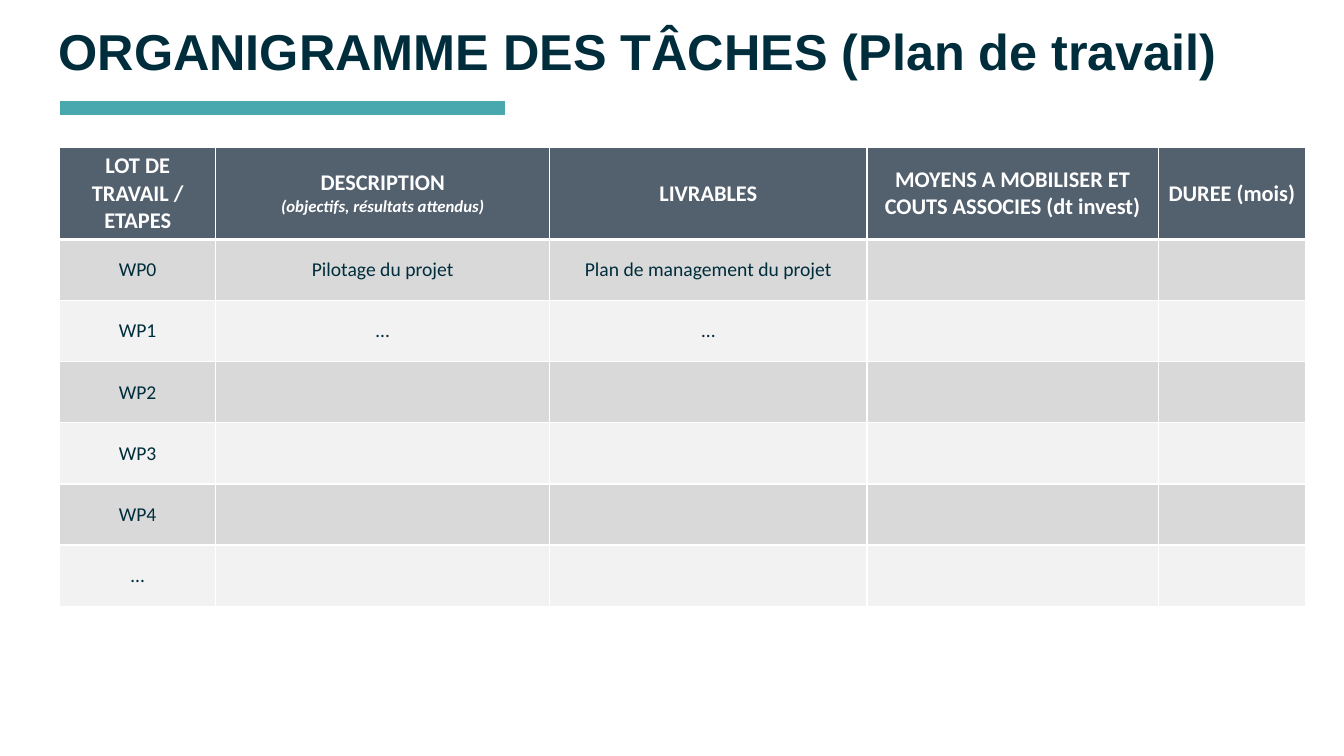
from lxml import etree
from pptx import Presentation
from pptx.dml.color import RGBColor
from pptx.enum.shapes import MSO_CONNECTOR as Connector
from pptx.enum.text import MSO_ANCHOR as Anchor, MSO_AUTO_SIZE as AutoSize, PP_ALIGN as Align
from pptx.oxml.ns import qn
from pptx.util import Cm, Pt

NAVY, TEAL, SLATE, WHITE = "002D3C", "49A8AE", "53606E", "FFFFFF"
BANDS = ("D9D9D9", "F2F2F2")
LEFT = 1.5
COLUMN_WIDTHS = (3.94, 8.41, 8, 7.34, 3.71)
HEADER_HEIGHT, STAGE_HEIGHT = 2.3, 1.54
HEADINGS = (
    ("LOT DE TRAVAIL / ETAPES",),
    ("DESCRIPTION", "(objectifs, résultats attendus)"),
    ("LIVRABLES",),
    ("MOYENS A MOBILISER ET COUTS ASSOCIES (dt invest)",),
    ("DUREE (mois)",),
)
STAGES = (
    ("WP0", "Pilotage du projet", "Plan de management du projet"),
    ("WP1", "…", "…"),
    ("WP2",),
    ("WP3",),
    ("WP4",),
    ("…",),
)


def colour(code):
    """Turn a hex string into a colour."""
    return RGBColor.from_string(code)


def add_run(paragraph, wording, size, ink, font="Calibri", bold=False, italic=False):
    """Add one formatted run to a paragraph."""
    run = paragraph.add_run()
    run.text = wording
    run.font.name = font
    run.font.size = Pt(size)
    run.font.bold = bold
    run.font.italic = italic
    run.font.color.rgb = colour(ink)


def set_title(slide, wording):
    """Place and fill the title placeholder."""
    title = slide.shapes.title
    title.left, title.top, title.width, title.height = Cm(1.22), Cm(0.69), Cm(30.86), Cm(1.37)
    frame = title.text_frame
    frame.auto_size = AutoSize.NONE
    frame.word_wrap = True
    frame.vertical_anchor = Anchor.MIDDLE
    heading = frame.paragraphs[0]
    heading.alignment = Align.LEFT
    heading.line_spacing = 0.9
    add_run(heading, wording, 36, NAVY, font="Arial", bold=True)


def add_underline(slide):
    """Draw the thick rule under the title."""
    rule = slide.shapes.add_connector(Connector.STRAIGHT, Cm(LEFT), Cm(2.72), Cm(12.73), Cm(2.72))
    rule.line.color.rgb = colour(TEAL)
    rule.line.width = Pt(10)
    etree.SubElement(rule._element.spPr, qn("a:effectLst"))


def style_cell(cell, fill, bottom_width=1):
    """Give a cell white borders, a fill and middle anchoring."""
    cell.vertical_anchor = Anchor.MIDDLE
    properties = cell._tc.get_or_add_tcPr()
    for side, width in (("L", 1), ("R", 1), ("T", 1), ("B", bottom_width)):
        border = etree.SubElement(properties, qn(f"a:ln{side}"), w=str(Pt(width)))
        paint = etree.SubElement(border, qn("a:solidFill"))
        etree.SubElement(paint, qn("a:srgbClr"), val=WHITE)
    cell.fill.solid()
    cell.fill.fore_color.rgb = colour(fill)


def fill_heading(cell, label, hint=None):
    """Write a column heading with an optional hint below it."""
    style_cell(cell, SLATE, bottom_width=3)
    frame = cell.text_frame
    frame.paragraphs[0].alignment = Align.CENTER
    add_run(frame.paragraphs[0], label, 16, WHITE, bold=True)
    if hint:
        hint_line = frame.add_paragraph()
        hint_line.alignment = Align.CENTER
        add_run(hint_line, hint, 12, WHITE, bold=True, italic=True)


def add_work_plan(slide):
    """Build the table of work packages."""
    total_height = HEADER_HEIGHT + STAGE_HEIGHT * len(STAGES)
    plan = slide.shapes.add_table(
        len(STAGES) + 1, len(HEADINGS),
        Cm(LEFT), Cm(3.71), Cm(sum(COLUMN_WIDTHS)), Cm(total_height),
    ).table
    for column, width in zip(plan.columns, COLUMN_WIDTHS):
        column.width = Cm(width)
    for row in plan.rows:
        row.height = Cm(STAGE_HEIGHT)
    plan.rows[0].height = Cm(HEADER_HEIGHT)
    for index, heading in enumerate(HEADINGS):
        fill_heading(plan.cell(0, index), *heading)
    for number, stage in enumerate(STAGES):
        cells = plan.rows[number + 1].cells
        for cell in cells:
            style_cell(cell, BANDS[number % 2])
        for cell, wording in zip(cells, stage):
            entry = cell.text_frame.paragraphs[0]
            entry.alignment = Align.CENTER
            add_run(entry, wording, 14, NAVY)


def main():
    """Create the slide and save it."""
    deck = Presentation()
    deck.slide_width, deck.slide_height = Cm(33.87), Cm(19.05)
    slide = deck.slides.add_slide(deck.slide_layouts[5])
    add_underline(slide)
    set_title(slide, "ORGANIGRAMME DES TÂCHES (Plan de travail)")
    add_work_plan(slide)
    deck.save("out.pptx")


if __name__ == "__main__":
    main()
